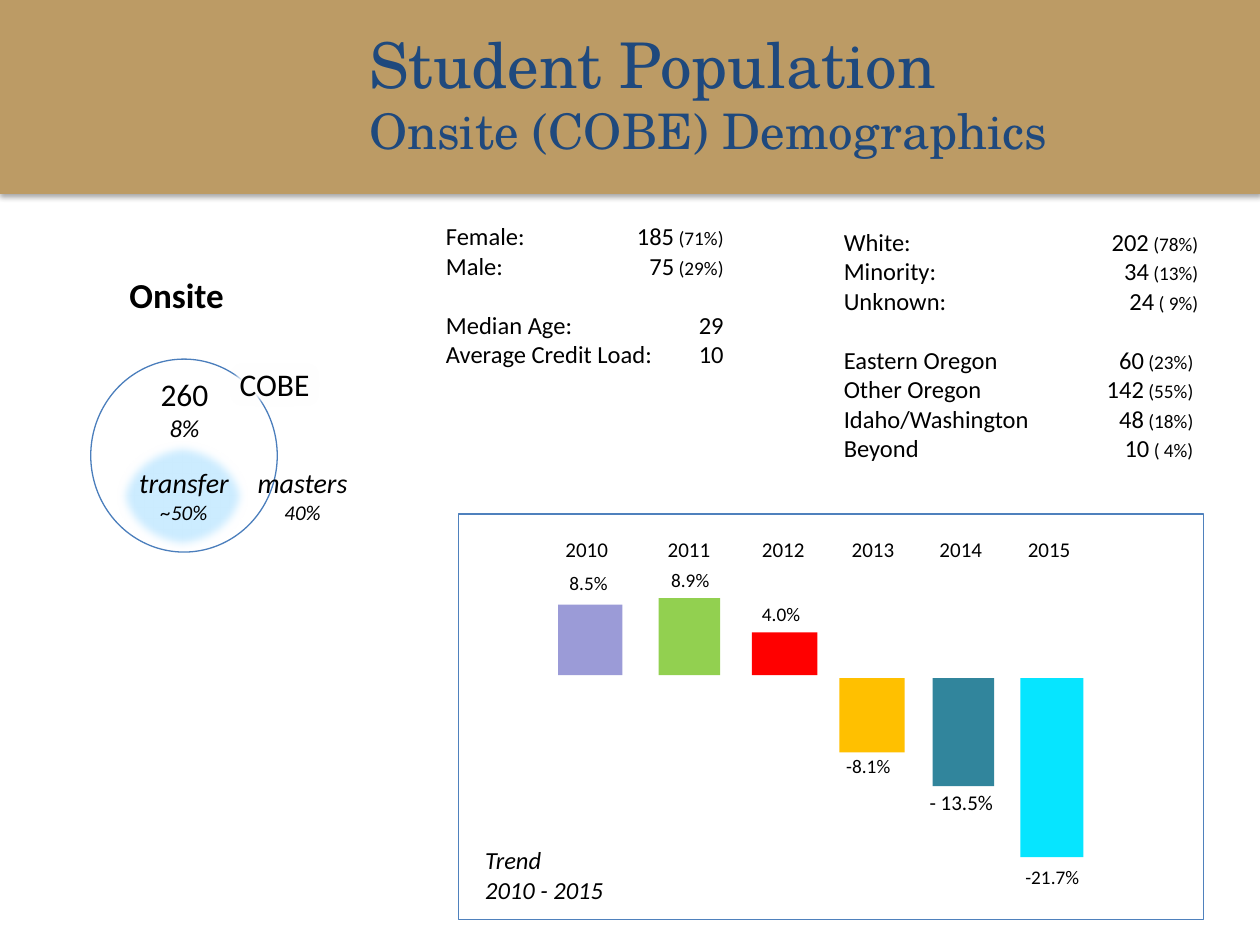
from dataclasses import dataclass

from lxml import etree
from pptx import Presentation
from pptx.dml.color import RGBColor
from pptx.enum.shapes import MSO_SHAPE
from pptx.enum.text import MSO_ANCHOR, MSO_AUTO_SIZE, PP_ALIGN
from pptx.oxml.ns import qn
from pptx.util import Cm, Pt

RECT, OVAL = MSO_SHAPE.RECTANGLE, MSO_SHAPE.OVAL
LEFT, MID = PP_ALIGN.LEFT, PP_ALIGN.CENTER
GOLD = RGBColor(0xBC, 0x9B, 0x65)
NAVY = RGBColor(0x1F, 0x49, 0x7D)
BLUE = RGBColor(0x4F, 0x81, 0xBD)
RING = RGBColor(0x4B, 0x7E, 0xBC)
SKY = RGBColor(0xCC, 0xEC, 0xFF)
PALE = RGBColor(0xDC, 0xE6, 0xF2)
WHITE = RGBColor(0xFF, 0xFF, 0xFF)
BLACK = RGBColor(0, 0, 0)
LILAC = RGBColor(0x9B, 0x9B, 0xD7)
GREEN = RGBColor(0x92, 0xD0, 0x50)
RED = RGBColor(0xFF, 0, 0)
AMBER = RGBColor(0xFF, 0xC0, 0)
TEAL = RGBColor(0x31, 0x85, 0x9C)
CYAN = RGBColor(0x06, 0xE5, 0xFF)
SANS, SERIF = "Calibri", "TeX Gyre Schola"


@dataclass
class Box:
    """Left, top, width and height in centimetres."""
    x: float
    y: float
    w: float
    h: float

    def emu(self) -> tuple:
        return Cm(self.x), Cm(self.y), Cm(self.w), Cm(self.h)


@dataclass
class Bar:
    year: str
    year_x: float
    x: float
    w: float
    h: float
    color: RGBColor
    note: str
    note_box: Box
    size: int = 11


@dataclass
class Stat:
    name: str
    count: str
    share: str = ""
    gap: int = 0


BARS = [
    Bar("2010", 11.15, 11.25, 1.3, 1.42, LILAC, "8.5%", Box(11.23, 11.4, 1.3, 0.74)),
    Bar("2011", 13.21, 13.28, 1.24, 1.55, GREEN, "8.9%", Box(13.28, 11.33, 1.3, 0.74)),
    Bar("2012", 15.11, 15.16, 1.32, 0.86, RED, "4.0%", Box(15.11, 12.01, 1.3, 0.74)),
    Bar("2013", 16.92, 16.92, 1.32, 1.5, AMBER, "-8.1%", Box(16.81, 15.09, 1.42, 0.74)),
    Bar("2014", 18.69, 18.8, 1.24, 2.18, TEAL, "- 13.5%", Box(18.49, 15.8, 1.8, 0.76), 12),
    Bar("2015", 20.47, 20.57, 1.27, 3.61, CYAN, "-21.7%", Box(20.42, 17.32, 1.6, 0.74)),
]
PEOPLE = [
    Stat("Female:", "185", "(71%)"),
    Stat("Male:", "75", "(29%)"),
    Stat("Median Age:", "29", gap=17),
    Stat("Average Credit Load:", "10"),
]
ORIGINS = [
    Stat("White:", "202", "(78%)"),
    Stat("Minority:", "34", "(13%)"),
    Stat("Unknown:", "24", "( 9%)"),
    Stat("Eastern Oregon", "60", "(23%)", 17),
    Stat("Other Oregon", "142", "(55%)"),
    Stat("Idaho/Washington", "48", "(18%)"),
    Stat("Beyond", "10", "( 4%)"),
]


def shape(slide, kind, box: Box, fill=None, line=None):
    item = slide.shapes.add_shape(kind, *box.emu())
    item.shadow.inherit = False
    if fill is None:
        item.fill.background()
    else:
        item.fill.solid()
        item.fill.fore_color.rgb = fill
    if line is None:
        item.line.fill.background()
    else:
        item.line.color.rgb = line
        item.line.width = Pt(0.75)
    return item


def effect(item, name: str, **attrs):
    """Put one effect in the empty effect list of a shape."""
    group = item._element.spPr.find(qn("a:effectLst"))
    return etree.SubElement(group, qn(name), attrs)


def write(frame, text: str, sizes: list, align=LEFT, face=SANS, color=BLACK):
    """Fill a frame, with one font size for each paragraph."""
    frame.text = text
    for para, size in zip(frame.paragraphs, sizes):
        para.alignment = align
        for run in para.runs:
            run.font.name, run.font.size = face, Pt(size)
            run.font.color.rgb = color


def label(slide, box: Box, text: str, sizes: list, align=LEFT):
    frame = slide.shapes.add_textbox(*box.emu()).text_frame
    frame.word_wrap = False
    write(frame, text, sizes, align)
    return frame


def slant(frame, first: int = 0) -> None:
    for para in frame.paragraphs[first:]:
        para.runs[0].font.italic = True


def stats(slide, box: Box, rows: list, stops: list) -> None:
    """List the rows; the right tab moves to the next stop after a gap."""
    frame = slide.shapes.add_textbox(*box.emu()).text_frame
    frame.word_wrap = True
    frame.text = "\n".join(f"{row.name}\t{row.count}" for row in rows)
    part = 0
    for para, row in zip(frame.paragraphs, rows):
        part += row.gap > 0
        props = para._p.get_or_add_pPr()
        tabs = etree.SubElement(props, qn("a:tabLst"))
        etree.SubElement(tabs, qn("a:tab"), pos=str(Cm(stops[part])), algn="r")
        if row.gap:
            para.space_before = Pt(row.gap)
        if row.share:
            para.add_run().text = " " + row.share
        for run, size in zip(para.runs, (14, 11)):
            run.font.name, run.font.size = SANS, Pt(size)
            run.font.color.rgb = BLACK


def header(slide) -> None:
    band = shape(slide, RECT, Box(0, -0.03, 25.4, 3.94), GOLD)
    shade = effect(band, "a:outerShdw", blurRad="40000", dist="23000",
                   dir="5400000", rotWithShape="0")
    tint = etree.SubElement(shade, qn("a:srgbClr"), val="000000")
    etree.SubElement(tint, qn("a:alpha"), val="35000")
    title = slide.shapes.title
    title.left, title.top, title.width, title.height = Box(7.19, 0.41, 17.58, 2.9).emu()
    band._element.addnext(title._element)  # title in front of the band
    frame = title.text_frame
    frame.auto_size = MSO_AUTO_SIZE.NONE
    frame.vertical_anchor = MSO_ANCHOR.MIDDLE
    write(frame, "Student Population\nOnsite (COBE) Demographics", [36, 28],
          face=SERIF, color=NAVY)


def circles(slide) -> None:
    head = label(slide, Box(2.36, 5.38, 2.44, 1.12), "Onsite", [20])
    head.paragraphs[0].runs[0].font.bold = True
    shape(slide, OVAL, Box(1.83, 7.24, 3.76, 3.89), line=RING)
    slant(label(slide, Box(2.97, 7.44, 1.5, 1.63), "260\n8%", [18, 14], MID), 1)
    cobe = shape(slide, RECT, Box(4.57, 7.24, 1.93, 1.02), WHITE)
    effect(cobe, "a:softEdge", rad="63500")
    cobe.text_frame.word_wrap = False
    write(cobe.text_frame, "COBE", [18], MID)
    core = shape(slide, OVAL, Box(2.36, 8.89, 2.64, 2.21), SKY, RING)
    effect(core, "a:softEdge", rad="63500")
    slant(label(slide, Box(2.54, 9.27, 2.34, 1.45), "transfer\n~50%", [16, 12], MID))
    spot = shape(slide, RECT, Box(5.11, 9.3, 0.69, 0.91), PALE, RING)
    effect(spot, "a:softEdge", rad="112500")
    slant(label(slide, Box(4.93, 9.27, 2.34, 1.45), "masters\n40%", [16, 12], MID))


def trend(slide) -> None:
    shape(slide, RECT, Box(9.25, 10.36, 15.02, 8.18), WHITE, BLUE)
    for bar in BARS:
        top = 13.67 if bar.note.startswith("-") else 13.61 - bar.h
        shape(slide, RECT, Box(bar.x, top, bar.w, bar.h), bar.color)
        label(slide, Box(bar.year_x, 10.69, 1.4, 0.76), bar.year, [12])
        label(slide, bar.note_box, bar.note, [bar.size])
    slant(label(slide, Box(9.53, 16.92, 2.92, 1.45), "Trend\n2010 - 2015", [14, 14]))


def main() -> None:
    deck = Presentation()
    deck.slide_width, deck.slide_height = Cm(25.4), Cm(19.05)
    slide = deck.slides.add_slide(deck.slide_layouts[5])
    header(slide)
    circles(slide)
    stats(slide, Box(8.74, 4.34, 6.63, 3.25), PEOPLE, [5.6, 5.6])
    stats(slide, Box(16.76, 4.45, 7.82, 5.51), ORIGINS, [7.15, 7.05])
    trend(slide)
    deck.save("out.pptx")


if __name__ == "__main__":
    main()
